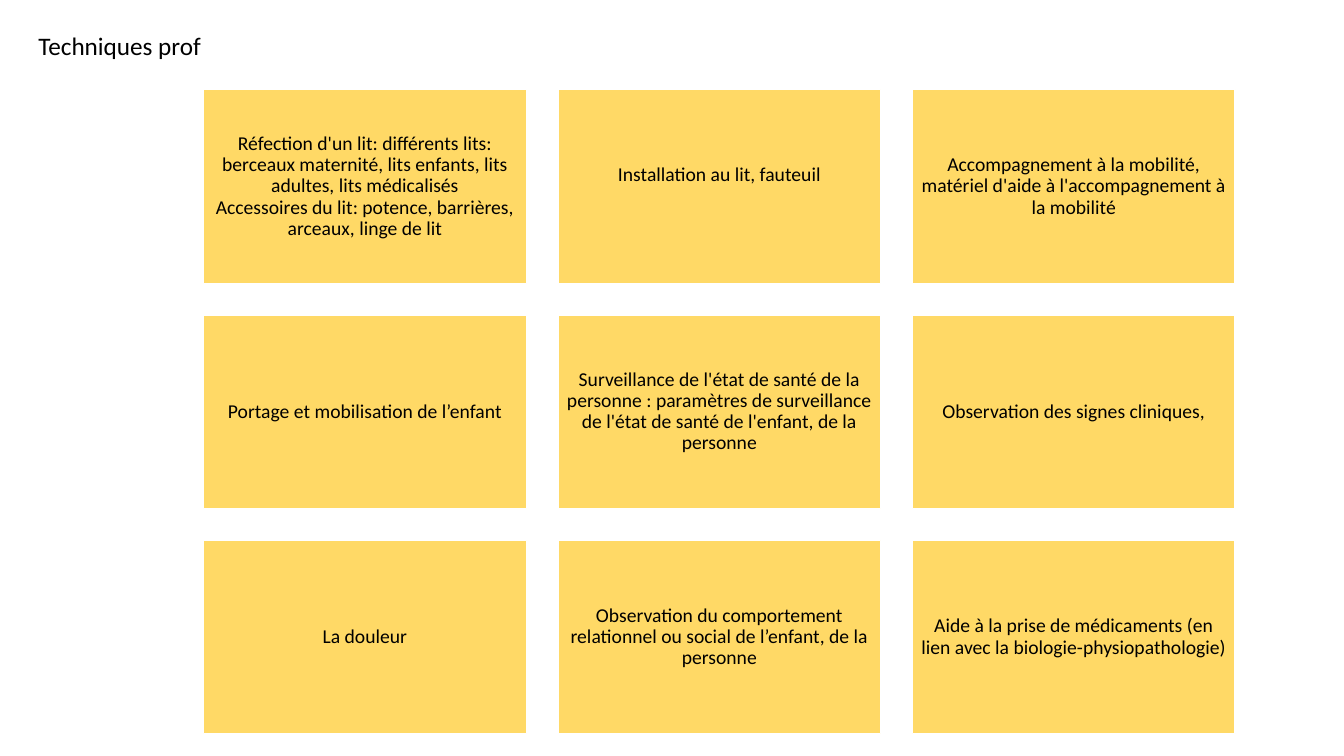
from lxml.etree import SubElement
from pptx import Presentation
from pptx.dml.color import RGBColor
from pptx.enum.shapes import MSO_SHAPE as Shape
from pptx.enum.text import MSO_ANCHOR as Anchor, PP_ALIGN as Align
from pptx.oxml.ns import qn
from pptx.util import Inches, Pt

TITLE = "Techniques prof"
TECHNIQUES = [
    "Réfection d'un lit: différents lits: berceaux maternité, lits enfants, lits adultes, "
    "lits médicalisés\vAccessoires du lit: potence, barrières, arceaux, linge de lit",
    "Installation au lit, fauteuil",
    "Accompagnement à la mobilité, matériel d'aide à l'accompagnement à la mobilité",
    "Portage et mobilisation de l’enfant",
    "Surveillance de l'état de santé de la personne : paramètres de surveillance "
    "de l'état de santé de l'enfant, de la personne",
    "Observation des signes cliniques,",
    "La douleur",
    "Observation du comportement relationnel ou social de l’enfant, de la personne",
    "Aide à la prise de médicaments (en lien avec la biologie-physiopathologie)",
]
RAISED = {"Installation au lit, fauteuil": 0.23}  # extra bottom margin, one line high

COLORS = {"card": "FFD966", "border": "FFFFFF", "text": "000000"}
FONT = "Calibri"
CARD_SIZE = 14
COLUMNS = 3
LEFT, TOP = 2.02, 0.89
WIDTH, HEIGHT = 3.2, 1.92
GAP = 0.315
MARGIN = 0.05
CARD_FRAME = {
    "word_wrap": True,
    "vertical_anchor": Anchor.MIDDLE,
    "margin_left": Inches(MARGIN),
    "margin_right": Inches(MARGIN),
    "margin_top": Inches(MARGIN),
}
TITLE_BOX = {"left": 0.28, "top": 0.25, "width": 3.23, "height": 0.4}


def color(name):
    return RGBColor.from_string(COLORS[name])


def write(paragraph, text, size, align):
    paragraph.text = text
    paragraph.alignment = align
    for run in paragraph.runs:
        run.font.name = FONT
        run.font.size = Pt(size)
        run.font.color.rgb = color("text")
    for line_break in paragraph._p.findall(qn("a:br")):
        SubElement(line_break, qn("a:rPr"), sz=str(size * 100))


def add_card(slide, index, technique):
    row, column = divmod(index, COLUMNS)
    card = slide.shapes.add_shape(
        Shape.RECTANGLE,
        Inches(LEFT + column * (WIDTH + GAP)),
        Inches(TOP + row * (HEIGHT + GAP)),
        Inches(WIDTH),
        Inches(HEIGHT),
    )
    card.shadow.inherit = False
    card.fill.solid()
    card.fill.fore_color.rgb = color("card")
    card.line.color.rgb = color("border")
    card.line.width = Pt(1)
    frame = card.text_frame
    for setting, value in CARD_FRAME.items():
        setattr(frame, setting, value)
    frame.margin_bottom = Inches(MARGIN + RAISED.get(technique, 0))
    paragraph = frame.paragraphs[0]
    write(paragraph, technique, CARD_SIZE, Align.CENTER)
    paragraph.line_spacing = 0.9


def main():
    deck = Presentation()
    deck.slide_width, deck.slide_height = Inches(13.33), Inches(7.5)
    slide = deck.slides.add_slide(deck.slide_layouts.get_by_name("Title Only"))

    title = slide.shapes.title
    for side, length in TITLE_BOX.items():
        setattr(title, side, Inches(length))
    title.text_frame.vertical_anchor = Anchor.TOP
    write(title.text_frame.paragraphs[0], TITLE, 18, Align.LEFT)

    for index, technique in enumerate(TECHNIQUES):
        add_card(slide, index, technique)
    deck.save("out.pptx")


if __name__ == "__main__":
    main()
